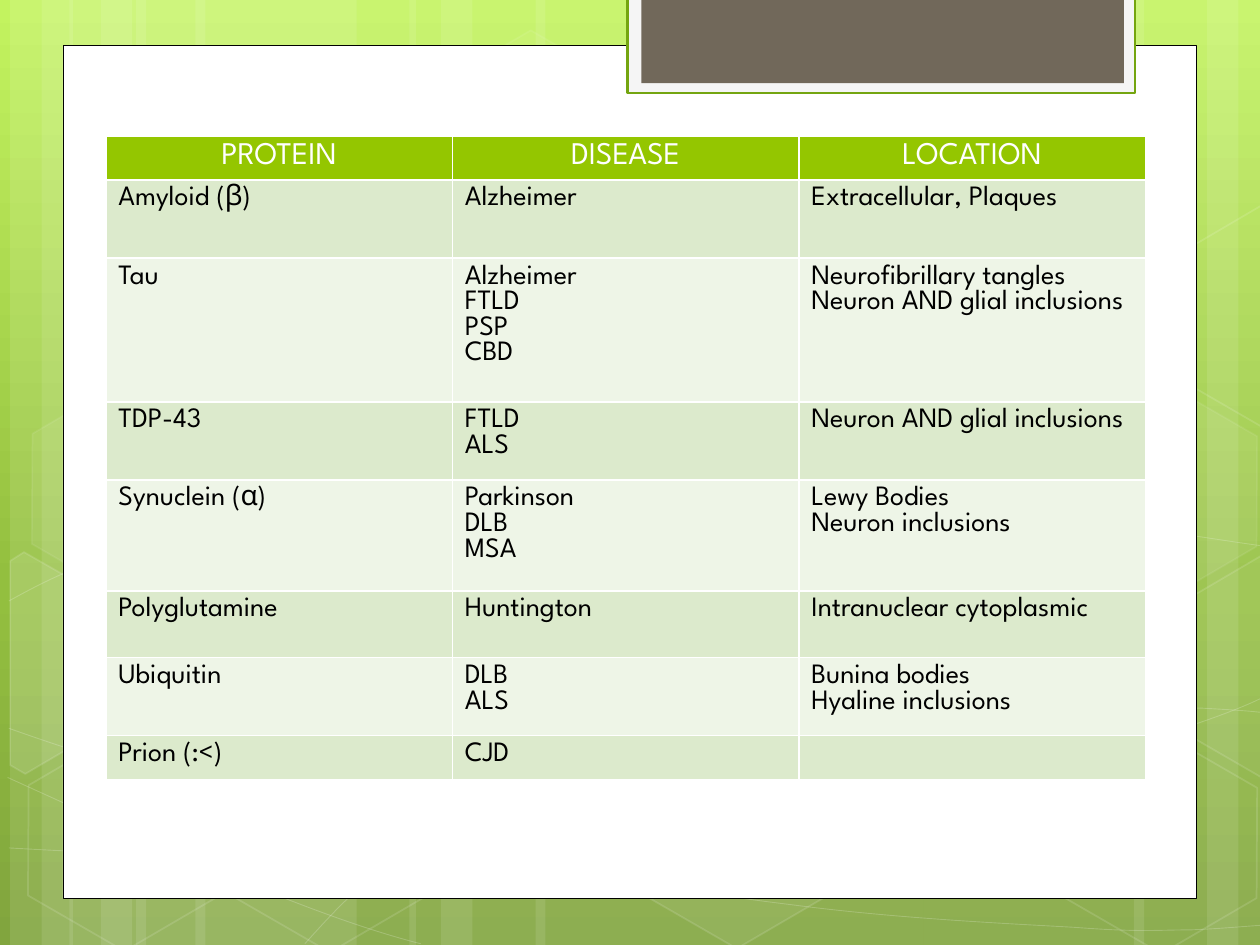
from copy import deepcopy
from dataclasses import dataclass
from math import cos, radians, sin
from typing import NamedTuple, Optional

from lxml.etree import SubElement
from pptx import Presentation
from pptx.dml.color import RGBColor
from pptx.enum.lang import MSO_LANGUAGE_ID
from pptx.enum.shapes import MSO_SHAPE
from pptx.enum.text import PP_ALIGN
from pptx.oxml import parse_xml
from pptx.oxml.ns import nsdecls, qn
from pptx.util import Cm, Pt


@dataclass(frozen=True)
class Theme:
    white: str = "FFFFFF"
    black: str = "000000"
    mat: str = "F5F5F5"
    mat_line: str = "74A510"
    tab: str = "71685A"
    header: str = "94C600"
    bands: tuple = ("DCEACC", "EEF5E7")
    backdrop: tuple = ((0, "C3F35F"), (62, "93BF3F"), (100, "81A53E"))
    font: str = "League Spartan"
    header_size: int = 18
    body_size: int = 16


class Paint(NamedTuple):
    fill: Optional[str] = None
    fill_opacity: int = 100
    line: Optional[str] = None
    line_width: float = 1
    line_opacity: int = 100


class Frame(NamedTuple):
    left: float
    top: float
    width: float
    height: float
    paint: Paint


class Hexagon(NamedTuple):
    left: float
    top: float
    fill_opacity: int
    line_opacity: int


class CutHexagon(NamedTuple):
    center: tuple
    points: tuple
    fill_opacity: int


THEME = Theme()
TILT = 30

BARS = (
    (1.08, 1.75), (0.08, 0.5), (0.33, 0.83), (1.55, 1.75), (0.55, 0.5), (0.8, 0.83),
    (7.33, 1.75), (9.58, 0.5), (9, 0.83), (4.25, 3.08), (3.25, 0.5), (3.5, 0.83),
)
CURVES = (
    ((0.07, 6.73), (0.61, 6.76), (1.15, 6.79), (1.9, 6.78), (2.65, 6.77), (3.58, 6.75), (4.58, 6.65),
     (5.58, 6.55), (7, 6.36), (7.92, 6.17), (8.83, 5.98), (9.77, 5.68), (10.07, 5.51)),
    ((0.07, 4.77), (0.36, 4.61), (0.65, 4.46), (1.21, 4.31), (1.78, 4.16), (2.59, 3.94), (3.47, 3.87),
     (4.36, 3.8), (5.44, 3.79), (6.54, 3.87), (7.64, 3.95), (9.47, 4.26), (10.07, 4.34)),
    ((0.06, 6.17), (1.27, 6.72), (2.47, 7.27), (3.34, 7.49)),
    ((0.07, 5.78), (0.38, 5.89), (0.7, 6), (1.28, 6.16), (1.86, 6.31), (2.73, 6.56), (3.57, 6.73),
     (4.4, 6.9), (5.45, 7.08), (6.28, 7.18), (7.11, 7.29), (8, 7.33), (8.53, 7.36),
     (9.05, 7.4), (9.19, 7.38), (9.45, 7.38), (9.71, 7.37), (9.89, 7.35), (10.07, 7.34)),
    ((2.42, 7.49), (2.6, 7.29), (2.78, 7.09), (3.02, 6.91), (3.26, 6.73), (3.6, 6.53), (3.88, 6.39),
     (4.16, 6.25), (4.33, 6.19), (4.7, 6.09), (5.06, 5.99), (5.73, 5.85), (6.08, 5.78),
     (6.44, 5.71), (6.49, 5.71), (6.8, 5.69), (7.11, 5.66), (7.6, 5.63), (7.94, 5.62),
     (8.29, 5.61), (8.86, 5.62), (8.86, 5.62), (9.08, 5.62), (9.31, 5.62), (9.53, 5.62),
     (9.71, 5.63), (9.88, 5.64), (9.97, 5.65), (10.06, 5.66), (10.03, 5.65), (10.06, 5.66)),
)
HEXAGONS = (
    Hexagon(3.34, 0.36, 4, 8), Hexagon(4.97, 5.89, 6, 12), Hexagon(0.11, 5.91, 0, 12),
    Hexagon(0.14, 3.12, 7, 8), Hexagon(1.74, 5.92, 0, 12), Hexagon(7.53, 4.53, 10, 12),
    Hexagon(8.34, 5.93, 0, 12), Hexagon(8.34, 3.14, 7, 8),
)
CUT_HEXAGONS = (
    CutHexagon((0.36, 5.35), ((0.08, 4.45), (0.19, 4.38), (0.96, 4.82), (0.95, 5.7),
                              (0.2, 6.14), (0.08, 6.07)), 10),
    CutHexagon((9.85, 5.2), ((9.26, 4.85), (10.01, 4.41), (10.09, 4.46), (10.09, 6.13),
                             (10.02, 6.17), (9.26, 5.73)), 4),
    CutHexagon((9.85, 2.41), ((9.26, 2.07), (10.01, 1.63), (10.1, 1.68), (10.09, 3.35),
                              (10.02, 3.39), (9.26, 2.95)), 0),
)
FRAMES = (
    Frame(0.5, 0.36, 9, 6.77, Paint(THEME.white, line=THEME.black, line_width=0.5)),
    Frame(4.98, -0.02, 4.03, 0.76, Paint(THEME.mat, line=THEME.mat_line, line_width=1.25)),
    Frame(5.09, -0.02, 3.83, 0.68, Paint(THEME.tab)),
)
ROWS = (
    (0.35, ("PROTEIN", "DISEASE", "LOCATION")),
    (0.62, ("Amyloid (β)", "Alzheimer", "Extracellular, Plaques")),
    (1.14, ("Tau", "Alzheimer\nFTLD\vPSP\nCBD", "Neurofibrillary tangles\nNeuron AND glial inclusions")),
    (0.62, ("TDP-43", "FTLD\nALS", "Neuron AND glial inclusions")),
    (0.88, ("Synuclein (α)", "Parkinson\nDLB\nMSA", "Lewy Bodies\nNeuron inclusions")),
    (0.53, ("Polyglutamine", "Huntington", "Intranuclear cytoplasmic")),
    (0.62, ("Ubiquitin", "DLB\nALS", "Bunina bodies\nHyaline inclusions")),
    (0.35, ("Prion (:<)", "CJD", "")),
)


def inches(value: float) -> int:
    return Cm(value * 2.54)


def apply_paint(shape, paint: Paint) -> None:
    shape.shadow.inherit = False
    sides = (
        (shape.fill, paint.fill, paint.fill_opacity, "./a:solidFill/a:srgbClr"),
        (shape.line.fill, paint.line, paint.line_opacity, "./a:ln/a:solidFill/a:srgbClr"),
    )
    for side, color, opacity, query in sides:
        if color is None or opacity == 0:
            side.background()
            continue
        side.solid()
        side.fore_color.rgb = RGBColor.from_string(color)
        if opacity < 100:
            for node in shape._element.spPr.xpath(query):
                SubElement(node, qn("a:alpha"), val=str(opacity * 1000))
    if paint.line:
        shape.line.width = Pt(paint.line_width)


def draw_preset(page, kind, left: float, top: float, width: float, height: float, paint: Paint):
    shape = page.shapes.add_shape(kind, *map(inches, (left, top, width, height)))
    apply_paint(shape, paint)
    return shape


def draw_outline(page, points, paint: Paint, close: bool):
    start, *others = [(inches(x), inches(y)) for x, y in points]
    builder = page.shapes.build_freeform(*start, scale=1.0)
    builder.add_line_segments(others, close=close)
    shape = builder.convert_to_shape()
    apply_paint(shape, paint)
    return shape


def draw_curve(page, knots, paint: Paint) -> None:
    shape = draw_outline(page, knots, paint, close=False)
    segments = shape._element.xpath(".//a:lnTo")
    for first, second, third in zip(*[iter(segments)] * 3):
        first.tag = qn("a:cubicBezTo")
        for segment in (second, third):
            first.append(segment[0])
            segment.getparent().remove(segment)


def level(points, center: tuple) -> list:
    cosine, sine = cos(radians(TILT)), sin(radians(TILT))
    offsets = [(x - center[0], y - center[1]) for x, y in points]
    return [(center[0] + x * cosine + y * sine, center[1] - x * sine + y * cosine) for x, y in offsets]


def set_backdrop(page) -> None:
    stops = "".join(
        f'<a:gs pos="{place * 1000}"><a:srgbClr val="{color}"/></a:gs>' for place, color in THEME.backdrop
    )
    page.background.fill.solid()
    properties = page._element.cSld.find(qn("p:bg")).find(qn("p:bgPr"))
    gradient = parse_xml(
        f'<a:gradFill {nsdecls("a")} rotWithShape="1"><a:gsLst>{stops}</a:gsLst>'
        '<a:lin ang="5400000" scaled="0"/></a:gradFill>'
    )
    properties.replace(properties.find(qn("a:solidFill")), gradient)


def write_text(box, text: str, *, size: int, color: str, align=None) -> None:
    box.text = text
    for para in box.paragraphs:
        para.alignment = align
        for span in para.runs:
            span.font.name = THEME.font
            span.font.size = Pt(size)
            span.font.bold = False
            span.font.language_id = MSO_LANGUAGE_ID.ENGLISH_US
            span.font.color.rgb = RGBColor.from_string(color)
        for line_break in para._p.findall(qn("a:br")):
            line_break.insert(0, deepcopy(para.runs[0]._r.rPr))
        if not para.runs:
            ending = SubElement(para._p, qn("a:endParaRPr"), sz=str(size * 100))
            SubElement(ending, qn("a:latin"), typeface=THEME.font)


def draw_table(page) -> None:
    total = sum(height for height, _ in ROWS)
    table = page.shapes.add_table(len(ROWS), 3, *map(inches, (0.84, 1.08, 8.25, total))).table
    for column in table.columns:
        column.width = inches(2.75)
    for row, (height, texts) in enumerate(ROWS):
        table.rows[row].height = inches(height)
        heading = row == 0
        fill = THEME.header if heading else THEME.bands[(row - 1) % 2]
        for column, text in enumerate(texts):
            cell = table.cell(row, column)
            cell.fill.solid()
            cell.fill.fore_color.rgb = RGBColor.from_string(fill)
            write_text(cell.text_frame, text, size=THEME.header_size if heading else THEME.body_size,
                       color=THEME.white if heading else THEME.black,
                       align=PP_ALIGN.CENTER if heading else None)


def main() -> None:
    deck = Presentation()
    deck.slide_width, deck.slide_height = inches(10), inches(7.5)
    page = deck.slides.add_slide(deck.slide_layouts[6])
    set_backdrop(page)
    for left, width in BARS:
        draw_preset(page, MSO_SHAPE.RECTANGLE, left, 0, width, 7.5, Paint(THEME.white, 10))
    for knots in CURVES:
        draw_curve(page, knots, Paint(line=THEME.white, line_width=0.5, line_opacity=20))
    for item in HEXAGONS:
        paint = Paint(THEME.white, item.fill_opacity, THEME.white, 1, item.line_opacity)
        hexagon = draw_preset(page, MSO_SHAPE.HEXAGON, item.left, item.top, 1.75, 1.52, paint)
        hexagon.adjustments[0] = 0.285
        hexagon.rotation = TILT
    for item in CUT_HEXAGONS:
        paint = Paint(THEME.white, item.fill_opacity, THEME.white, 1, 12)
        draw_outline(page, level(item.points, item.center), paint, close=True).rotation = TILT
    for frame in FRAMES:
        draw_preset(page, MSO_SHAPE.RECTANGLE, *frame)
    draw_table(page)
    deck.save("out.pptx")


if __name__ == "__main__":
    main()
